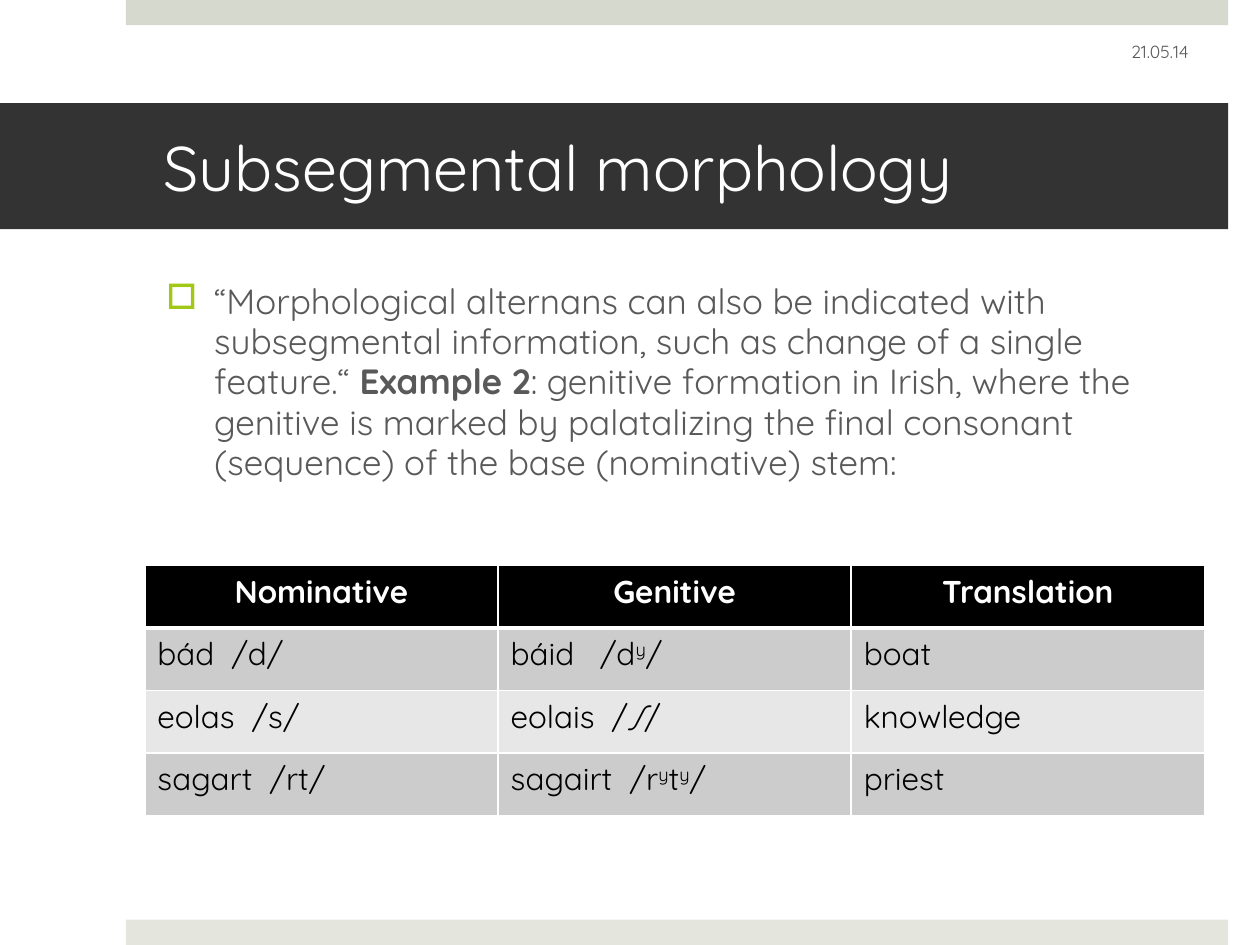
from lxml import etree
from pptx import Presentation
from pptx.dml.color import RGBColor
from pptx.enum.shapes import MSO_SHAPE
from pptx.enum.text import MSO_ANCHOR, PP_ALIGN
from pptx.oxml.ns import qn
from pptx.util import Cm, Pt

RECT = MSO_SHAPE.RECTANGLE
MID = MSO_ANCHOR.MIDDLE
TOP = MSO_ANCHOR.TOP
LEFT, MIDDLE, RIGHT = PP_ALIGN.LEFT, PP_ALIGN.CENTER, PP_ALIGN.RIGHT

FONT = "Quicksand"
WHITE = RGBColor(0xFF, 0xFF, 0xFF)
BLACK = RGBColor(0, 0, 0)
DARK = RGBColor(0x33, 0x33, 0x33)
GREY = RGBColor(0x59, 0x59, 0x59)
SAGE = RGBColor(0xD6, 0xD9, 0xCD)
PALE = RGBColor(0xE4, 0xE6, 0xDE)
ODD = RGBColor(0xCC, 0xCC, 0xCC)
EVEN = RGBColor(0xE7, 0xE7, 0xE7)
LIME = RGBColor(0xA2, 0xC8, 0x16)


def write(frame, parts, size=18, color=BLACK, align=LEFT, bold=False):
    frame.word_wrap = True
    para = frame.paragraphs[0]
    para.alignment = align
    for part in parts:
        text, mark = part if isinstance(part, tuple) else (part, "")
        run = para.add_run()
        run.text = text
        font = run.font
        font.name, font.size, font.color.rgb = FONT, Pt(size), color
        font.bold = bold or mark == "bold"
        font.italic = mark == "italic"
        if mark == "super":
            font._element.set("baseline", "30000")
    return para


def edge(cell, side, width):
    props = cell._tc.get_or_add_tcPr()
    line = etree.SubElement(props, qn("a:" + side), w=str(Pt(width)))
    fill = etree.SubElement(line, qn("a:solidFill"))
    etree.SubElement(fill, qn("a:srgbClr"), val=str(WHITE))


deck = Presentation()
deck.slide_width, deck.slide_height = Cm(25.4), Cm(19.05)
slide = deck.slides.add_slide(deck.slide_layouts[6])
shapes = slide.shapes

bars = [
    (2.54, 0, 22.22, 0.51, SAGE),
    (2.54, 18.54, 22.22, 0.51, PALE),
    (0, 2.08, 24.76, 2.54, DARK),
]
for left, top, width, height, color in bars:
    bar = shapes.add_shape(RECT, Cm(left), Cm(top), Cm(width), Cm(height))
    bar.shadow.inherit = False
    bar.fill.solid()
    bar.fill.fore_color.rgb = color
    bar.line.fill.background()

title = bar.text_frame
title.margin_left, title.margin_right = Cm(3.3), Cm(0.76)
title.vertical_anchor = MID
write(title, ["Subsegmental morphology"], size=36, color=WHITE)

body = shapes.add_textbox(Cm(3.1), Cm(5.56), Cm(21.13), Cm(11.86)).text_frame
body.vertical_anchor = TOP
quote = [
    "“Morphological alternans can also be indicated with subsegmental "
    "information, such as change of a single feature.“ ",
    ("Example 2", "bold"),
    ": genitive formation in Irish, where the genitive is marked by "
    "palatalizing the final consonant (sequence) of the base (nominative) stem:",
]
para = write(body, quote, size=20, color=GREY)
para.line_spacing = 0.96
props = para._p.get_or_add_pPr()
props.set("marL", str(Cm(0.97)))
props.set("indent", str(Cm(-0.97)))
tint = etree.SubElement(props, qn("a:buClr"))
etree.SubElement(tint, qn("a:srgbClr"), val=str(LIME))
etree.SubElement(props, qn("a:buChar"), char="□")

date = shapes.add_textbox(Cm(18.29), Cm(0.53), Cm(5.92), Cm(1.02)).text_frame
date.vertical_anchor = MID
write(date, ["21.05.14"], size=10, color=GREY, align=RIGHT)

rows = [
    [["Nominative"], ["Genitive"], ["Translation"]],
    [["bád  /d/"], ["báid   /d", ("y", "super"), "/"], ["boat"]],
    [["eolas  /s/"], ["eolais  /", ("∫", "italic"), "/"], ["knowledge"]],
    [
        ["sagart  /rt/"],
        ["sagairt  /r", ("y", "super"), "t", ("y", "super"), "/"],
        ["priest"],
    ],
]
table = shapes.add_table(
    len(rows), 3, Cm(2.92), Cm(11.4), Cm(21.36), Cm(5.04)
).table
for r, row in enumerate(rows):
    head = r == 0
    for c, parts in enumerate(row):
        cell = table.cell(r, c)
        for side in ("lnL", "lnR", "lnT", "lnB"):
            thick = head and side == "lnB" or r == 1 and side == "lnT"
            edge(cell, side, 3 if thick else 1)
        cell.fill.solid()
        cell.fill.fore_color.rgb = BLACK if head else ODD if r % 2 else EVEN
        write(
            cell.text_frame,
            parts,
            color=WHITE if head else BLACK,
            align=MIDDLE if head else LEFT,
            bold=head,
        )

deck.save("out.pptx")
